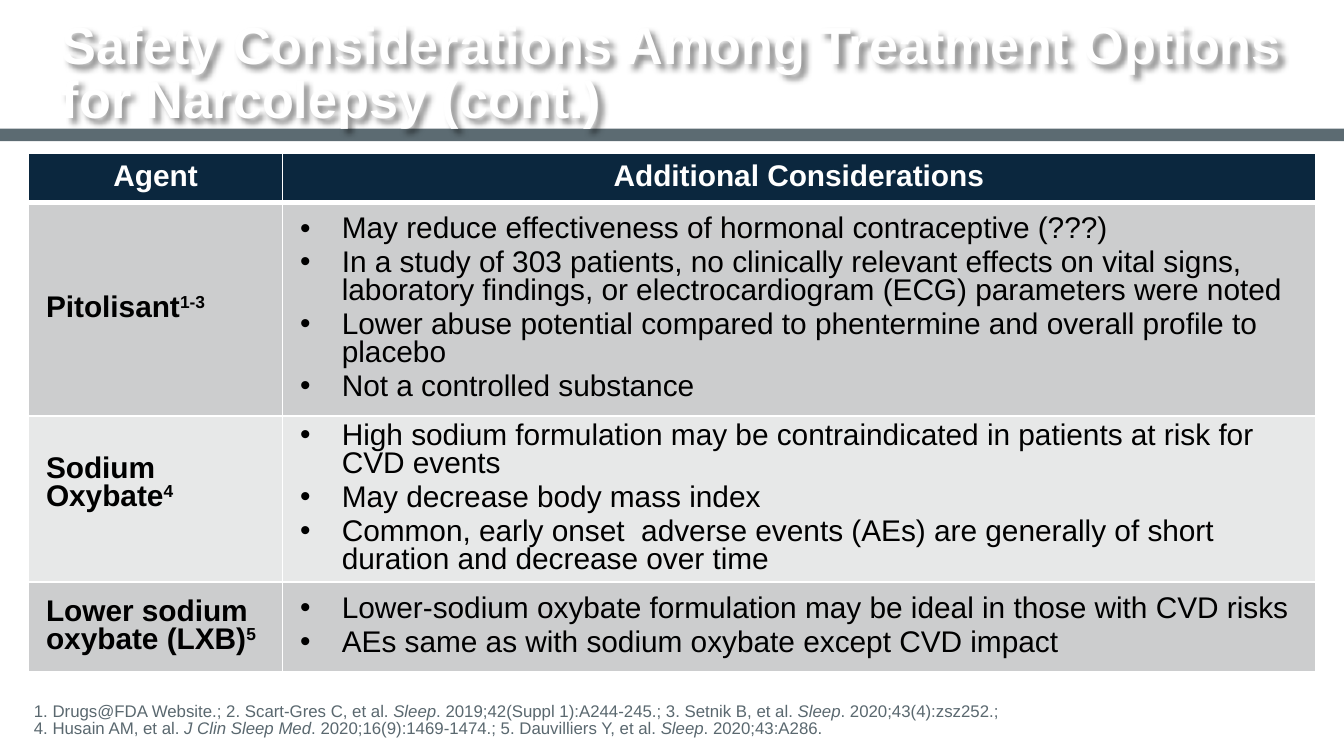
from pptx import Presentation
from pptx.dml.color import RGBColor
from pptx.enum.shapes import MSO_SHAPE
from pptx.enum.text import MSO_ANCHOR as Anchor, MSO_AUTO_SIZE as AutoSize, PP_ALIGN as Align
from pptx.oxml import parse_xml
from pptx.oxml.ns import nsdecls
from pptx.util import Cm, Pt

COLORS = {
    "white": "FFFFFF", "black": "000000", "slate": "5C6B72", "reference": "5A686F",
    "navy": "0B273E", "dark_row": "CCCDCE", "light_row": "E7E8E8",
}
HEADERS = ["Agent", "Additional Considerations"]
# Agent, reference numbers, bottom margin of the agent cell, considerations
AGENTS = [
    ("Pitolisant", "1-3", 0.13, [
        "May reduce effectiveness of hormonal contraceptive (???)",
        "In a study of 303 patients, no clinically relevant effects on vital signs, "
        "laboratory findings, or electrocardiogram (ECG) parameters were noted",
        "Lower abuse potential compared to phentermine and overall profile to placebo",
        "Not a controlled substance"]),
    ("Sodium Oxybate", "4", 0.68, [
        "High sodium formulation may be contraindicated in patients at risk for CVD events",
        "May decrease body mass index",
        "Common, early onset  adverse events (AEs) are generally of short duration "
        "and decrease over time"]),
    ("Lower sodium oxybate (LXB)", "5", 0.13, [
        "Lower-sodium oxybate formulation may be ideal in those with CVD risks",
        "AEs same as with sodium oxybate except CVD impact"]),
]
# Journal names stand between asterisks
REFERENCES = [
    "1. Drugs@FDA Website.; 2. Scart-Gres C, et al. *Sleep*. 2019;42(Suppl 1):A244-245.; "
    "3. Setnik B, et al. *Sleep*. 2020;43(4):zsz252.;",
    "4. Husain AM, et al. *J Clin Sleep Med*. 2020;16(9):1469-1474.; "
    "5. Dauvilliers Y, et al. *Sleep*. 2020;43:A286.",
]


def rgb(name):
    return RGBColor.from_string(COLORS[name])


def xml(tag, attrs="", inner=""):
    return parse_xml(f"<a:{tag} {nsdecls('a')} {attrs}>{inner}</a:{tag}>")


class SlideBuilder:
    font = "Arial"
    line_spacing = 0.85
    table_size = 16

    def __init__(self, prs):
        self.slide = prs.slides.add_slide(prs.slide_layouts[1])

    def style_run(self, r, size, color, bold=False, italic=False):
        f = r.font
        f.name, f.size, f.bold, f.italic = self.font, Pt(size), bold, italic
        f.color.rgb = rgb(color)

    def style_paragraph(self, p, align=Align.LEFT, before=0):
        p.alignment, p.line_spacing, p.space_before = align, self.line_spacing, Pt(before)

    def place(self, sp, box, insets, anchor):
        sp.left, sp.top, sp.width, sp.height = (Cm(v) for v in box)
        tf = sp.text_frame
        tf.margin_left, tf.margin_top, tf.margin_right, tf.margin_bottom = (Cm(v) for v in insets)
        tf.vertical_anchor, tf.word_wrap, tf.auto_size = anchor, True, AutoSize.NONE
        return tf

    def bar(self, box, color):
        """Add a plain band behind everything else."""
        sp = self.slide.shapes.add_shape(MSO_SHAPE.RECTANGLE, *(Cm(v) for v in box))
        sp.shadow.inherit = False
        sp.fill.solid()
        sp.fill.fore_color.rgb = rgb(color)
        sp.line.fill.background()
        self.slide.shapes._spTree.insert(2, sp._element)

    def title(self, text, box):
        """Set the white title; without a fill, the shape's shadow falls from its letters."""
        sp = self.slide.shapes.title
        tf = self.place(sp, box, (0, 0.13, 0, 0.13), Anchor.MIDDLE)
        tf.text = text
        p = tf.paragraphs[0]
        self.style_paragraph(p)
        self.style_run(p.runs[0], 28, "white", bold=True)
        sp.fill.background()
        color = f'<a:srgbClr val="{COLORS["black"]}"><a:alpha val="43000"/></a:srgbClr>'
        shadow = ('<a:outerShdw blurRad="38100" dist="38100" dir="2700000" algn="tl">'
                  f'{color}</a:outerShdw>')
        sp._element.spPr.append(xml("effectLst", inner=shadow))

    def references(self, lines, box):
        tf = self.place(self.slide.placeholders[1], box, (0.64, 0, 0, 0.33), Anchor.BOTTOM)
        p = tf.paragraphs[0]
        pPr = p._p.get_or_add_pPr()
        pPr.set("marL", "0")
        pPr.set("indent", "0")
        pPr.append(xml("buNone"))
        self.style_paragraph(p)
        for n, line in enumerate(lines):
            if n:
                p.add_line_break()
            for i, part in enumerate(line.split("*")):
                r = p.add_run()
                r.text = part
                self.style_run(r, 9, "reference", italic=i % 2 == 1)

    def cell(self, cell, fill, inset=0.33, border=1, bottom=0.13):
        """Fill a cell, draw its white borders and set its margins."""
        cell.fill.solid()
        cell.fill.fore_color.rgb = rgb(fill)
        cell.vertical_anchor = Anchor.MIDDLE
        cell.margin_left = cell.margin_right = Cm(inset)
        cell.margin_top, cell.margin_bottom = Cm(0.13), Cm(bottom)
        line = f'<a:solidFill><a:srgbClr val="{COLORS["white"]}"/></a:solidFill>'
        tcPr = cell._tc.get_or_add_tcPr()
        for i, (side, width) in enumerate(zip("LRTB", (1, 1, 1, border))):
            tcPr.insert(i, xml(f"ln{side}", f'w="{Pt(width)}"', line))
        return cell.text_frame

    def header_cell(self, cell, text):
        tf = self.cell(cell, "navy", inset=0.28, border=3)
        tf.text = text
        p = tf.paragraphs[0]
        self.style_paragraph(p, Align.CENTER)
        self.style_run(p.runs[0], self.table_size, "white", bold=True)

    def agent_cell(self, cell, fill, name, refs, bottom):
        p = self.cell(cell, fill, bottom=bottom).paragraphs[0]
        self.style_paragraph(p)
        for text in (name, refs):
            r = p.add_run()
            r.text = text
            self.style_run(r, self.table_size, "black", bold=True)
        r.font._element.set("baseline", "30000")

    def bullet_cell(self, cell, fill, items):
        tf = self.cell(cell, fill)
        tf.text = "\n".join(items)
        for i, p in enumerate(tf.paragraphs):
            pPr = p._p.get_or_add_pPr()
            pPr.set("marL", str(Cm(0.79)))
            pPr.set("indent", str(-Cm(0.79)))
            pPr.append(xml("buFont", f'typeface="{self.font}"'))
            pPr.append(xml("buChar", 'char="•"'))
            self.style_paragraph(p, before=3 if i else 0)
            self.style_run(p.runs[0], self.table_size, "black")

    def table(self, left, top, widths, heights):
        box = (left, top, sum(widths), sum(heights))
        table = self.slide.shapes.add_table(
            len(heights), len(widths), *(Cm(v) for v in box)).table
        for column, width in zip(table.columns, widths):
            column.width = Cm(width)
        for row, height in zip(table.rows, heights):
            row.height = Cm(height)
        for i, text in enumerate(HEADERS):
            self.header_cell(table.cell(0, i), text)
        for n, (name, refs, bottom, items) in enumerate(AGENTS, 1):
            fill = "dark_row" if n % 2 else "light_row"
            self.agent_cell(table.cell(n, 0), fill, name, refs, bottom)
            self.bullet_cell(table.cell(n, 1), fill, items)


def main():
    prs = Presentation()
    prs.slide_width, prs.slide_height = Cm(25.4), Cm(14.29)
    s = SlideBuilder(prs)
    s.bar((0, 2.43, 25.4, 0.24), "slate")
    s.title("Safety Considerations Among Treatment Options for Narcolepsy (cont.)",
            (1.17, 0.28, 23.1, 2.29))
    s.references(REFERENCES, (0, 13.3, 22.68, 0.98))
    s.table(0.54, 2.89, widths=(4.8, 19.52), heights=(0.94, 4.03, 3.07, 1.7))
    prs.save("out.pptx")


if __name__ == "__main__":
    main()
